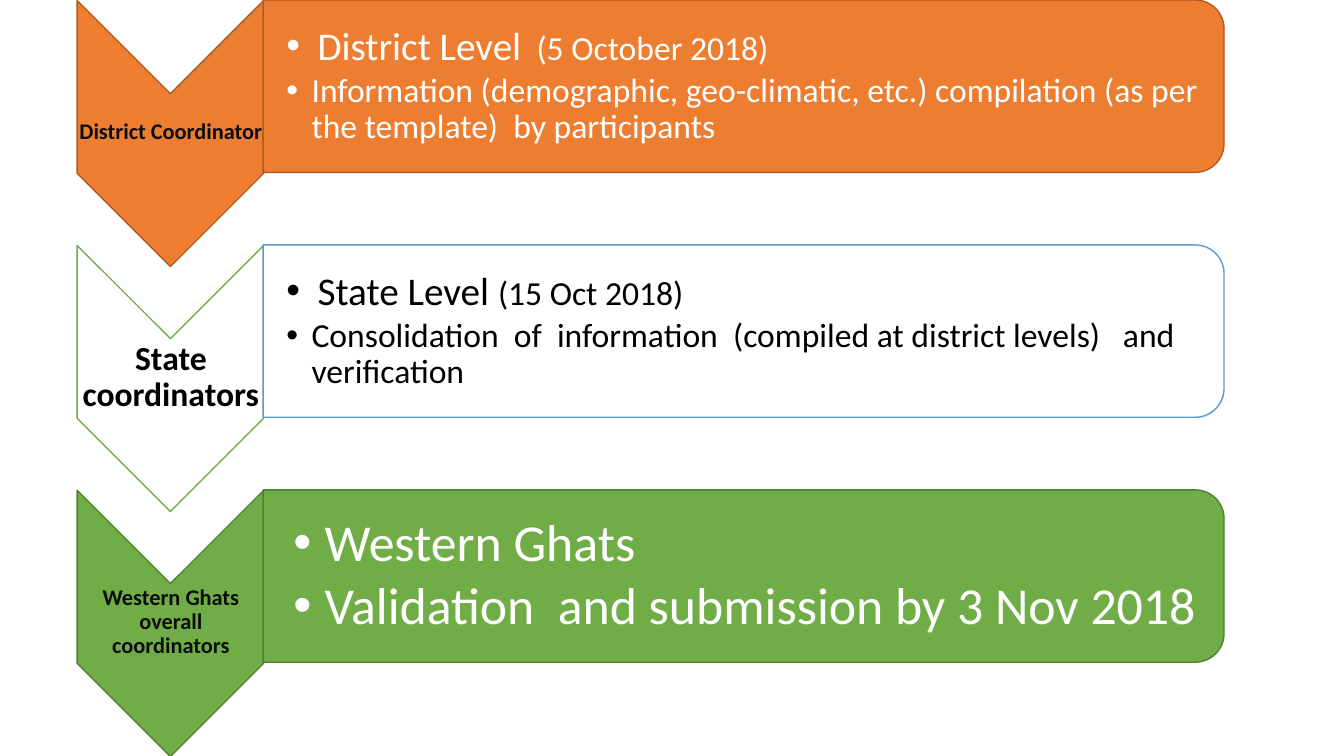
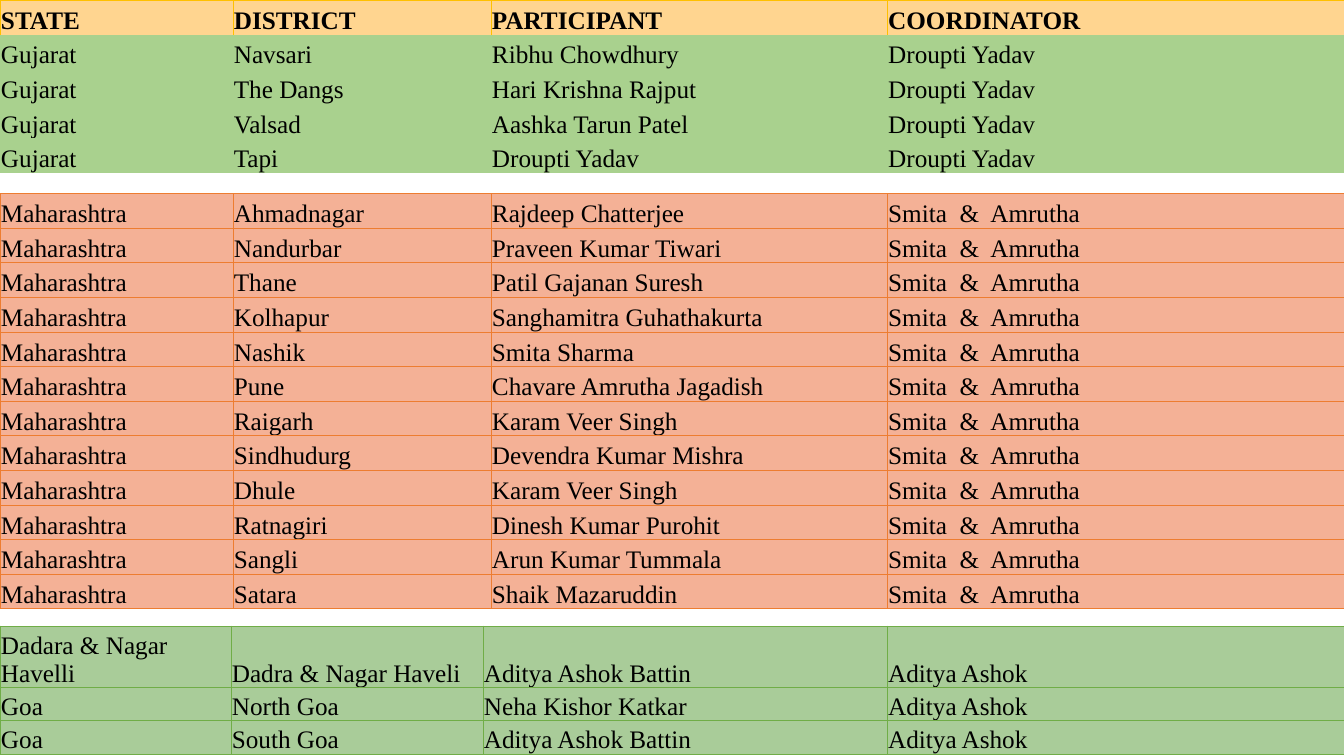
"""Build the survey coordination workflow and the participant list."""
import pptx
import pptx.dml.color
import pptx.enum.shapes
import pptx.enum.text
import pptx.oxml
import pptx.oxml.ns
import pptx.util

Inches = pptx.util.Inches
Pt = pptx.util.Pt
ANCHOR = pptx.enum.text.MSO_ANCHOR
ALIGN = pptx.enum.text.PP_ALIGN
SHAPE = pptx.enum.shapes.MSO_SHAPE

COLORS = {
    "white": "FFFFFF", "black": "000000", "ink": "0D0D0D",
    "orange": "ED7D31", "orange_edge": "AF5C24",
    "green": "70AD47", "green_edge": "538035", "blue": "5B9BD5",
    "gold": "FFC000", "header": "FFD590", "light_green": "A9D18E",
    "light_orange": "F4B196", "sage": "A9CC99",
}
BODY_FONT = "Calibri"
TABLE_FONT = "Times New Roman"
NO_STYLE = "{2D5ABB26-0587-4C30-8999-92F81FD0307C}"
STEP_PITCH = 2.43
ROW_HEIGHT = 4.12 / 12

STEPS = [
    {"role": "District Coordinator", "role_size": 16, "role_color": "ink", "role_inset": 0.01,
     "fill": "orange", "chevron_edge": "orange_edge", "card_edge": "orange_edge",
     "text_color": "white", "insets": (0.22, 0.02),
     "bullets": [
         (0.31, [("District Level", 28), ("  (5 October 2018)", 24)]),
         (0.25, [("Information (demographic, geo-climatic, etc.) compilation "
                  "(as per the template)  by participants", 24)])]},
    {"role": "State coordinators", "role_size": 24, "role_color": "black", "role_inset": 0.02,
     "fill": "white", "chevron_edge": "green", "card_edge": "blue",
     "text_color": "black", "insets": (0.22, 0.02),
     "bullets": [
         (0.31, [("State Level ", 28), ("(15 Oct 2018)", 24)]),
         (0.25, [("Consolidation  of  information  (compiled at district levels)   "
                  "and verification", 24)])]},
    {"role": "Western Ghats overall coordinators", "role_size": 16, "role_color": "ink",
     "role_inset": 0.01,
     "fill": "green", "chevron_edge": "green_edge", "card_edge": "green_edge",
     "text_color": "white", "insets": (0.29, 0.03),
     "bullets": [
         (0.31, [("Western Ghats", 37)]),
         (0.31, [("Validation  and submission by 3 Nov 2018", 37)])]},
]

GUJARAT = [
    ("Navsari", "Ribhu Chowdhury"), ("The Dangs", "Hari Krishna Rajput"),
    ("Valsad", "Aashka Tarun Patel"), ("Tapi", "Droupti Yadav"),
]
MAHARASHTRA = [
    ("Ahmadnagar", "Rajdeep Chatterjee"), ("Nandurbar", "Praveen Kumar Tiwari"),
    ("Thane", "Patil Gajanan Suresh"), ("Kolhapur", "Sanghamitra Guhathakurta"),
    ("Nashik", "Smita Sharma"), ("Pune", "Chavare Amrutha Jagadish"),
    ("Raigarh", "Karam Veer Singh"), ("Sindhudurg", "Devendra Kumar Mishra"),
    ("Dhule", "Karam Veer Singh"), ("Ratnagiri", "Dinesh Kumar Purohit"),
    ("Sangli", "Arun Kumar Tummala"), ("Satara", "Shaik Mazaruddin"),
]
OTHERS = [
    ("Dadara & Nagar Havelli", "Dadra & Nagar Haveli", "Aditya Ashok Battin"),
    ("Goa", "North Goa", "Neha Kishor Katkar"),
    ("Goa", "South Goa", "Aditya Ashok Battin"),
]


def color(name):
    """Return the named colour."""
    return pptx.dml.color.RGBColor.from_string(COLORS[name])


def apply_format(target, values):
    """Set each attribute of the target from a dict."""
    for name, value in values.items():
        setattr(target, name, value)


def add_run(paragraph, text, color_name, **font):
    """Add a run with its font values."""
    run = paragraph.add_run()
    run.text = text
    apply_format(run.font, font)
    run.font.color.rgb = color(color_name)


def add_turned_shape(slide, kind, box, fill, edge):
    """Add a shape turned a quarter clockwise."""
    shape = slide.shapes.add_shape(kind, *map(Inches, box))
    shape.rotation = 90
    shape.shadow.inherit = False
    shape.fill.solid()
    shape.fill.fore_color.rgb = color(fill)
    shape.line.color.rgb = color(edge)
    shape.line.width = Pt(1)


def add_text_frame(slide, box, left_inset, inset):
    """Add a wrapping, vertically centred text box and return its frame."""
    frame = slide.shapes.add_textbox(*map(Inches, box)).text_frame
    apply_format(frame, {
        "word_wrap": True, "vertical_anchor": ANCHOR.MIDDLE,
        "margin_left": Inches(left_inset), "margin_right": Inches(inset),
        "margin_top": Inches(inset), "margin_bottom": Inches(inset)})
    return frame


def set_bullet(paragraph, indent):
    """Give the paragraph a hanging round bullet."""
    properties = paragraph._p.get_or_add_pPr()
    properties.set("marL", str(Inches(indent)))
    properties.set("indent", str(-Inches(indent)))
    namespace = pptx.oxml.ns.nsdecls("a")
    for tag in ('buFont typeface="Arial"', 'buChar char="•"'):
        properties.append(pptx.oxml.parse_xml(f"<a:{tag} {namespace}/>"))


def add_bullets(frame, bullets, color_name):
    """Fill the frame with bulleted paragraphs."""
    for index, (indent, runs) in enumerate(bullets):
        paragraph = frame.add_paragraph() if index else frame.paragraphs[0]
        paragraph.line_spacing = 0.9
        if index:
            paragraph.space_before = Pt(0.15 * runs[0][1])
        set_bullet(paragraph, indent)
        for text, size in runs:
            add_run(paragraph, text, color_name, size=Pt(size), name=BODY_FONT)


def add_step(slide, top, step):
    """Add a chevron with its role and the card beside it."""
    add_turned_shape(slide, SHAPE.CHEVRON, (0.37, top + 0.4, 2.64, 1.85),
                     step["fill"], step["chevron_edge"])
    inset = step["role_inset"]
    frame = add_text_frame(slide, (0.77, top + 0.92, 1.85, 0.79), inset, inset)
    paragraph = frame.paragraphs[0]
    apply_format(paragraph, {"alignment": ALIGN.CENTER, "line_spacing": 0.9})
    add_run(paragraph, step["role"], step["role_color"],
            size=Pt(step["role_size"]), name=BODY_FONT, bold=True)
    add_turned_shape(slide, SHAPE.ROUND_2_SAME_RECTANGLE, (6.52, top - 3.91, 1.71, 9.53),
                     step["fill"], step["card_edge"])
    frame = add_text_frame(slide, (2.62, top + 0.08, 9.45, 1.55), *step["insets"])
    add_bullets(frame, step["bullets"], step["text_color"])


def set_borders(cell, sides, color_name):
    """Draw half-point borders on the given sides of a cell."""
    properties = cell._tc.get_or_add_tcPr()
    namespace = pptx.oxml.ns.nsdecls("a")
    for side in sides:
        properties.append(pptx.oxml.parse_xml(
            f'<a:ln{side} {namespace} w="{Pt(0.5)}"><a:solidFill>'
            f'<a:srgbClr val="{COLORS[color_name]}"/></a:solidFill></a:ln{side}>'))


def fill_cell(cell, text, fill, border, sides, bold):
    """Write and format one table cell."""
    apply_format(cell, {
        "vertical_anchor": ANCHOR.BOTTOM, "margin_left": Inches(0.01),
        "margin_right": Inches(0.01), "margin_top": Inches(0.01), "margin_bottom": 0})
    set_borders(cell, sides, border)
    cell.fill.solid()
    cell.fill.fore_color.rgb = color(fill)
    add_run(cell.text_frame.paragraphs[0], text, "black",
            size=Pt(18), name=TABLE_FONT, bold=bold)


def add_state_table(slide, top, rows, widths, fill, border, sides="LRTB",
                    has_header=False, first_height=ROW_HEIGHT, row_height=ROW_HEIGHT):
    """Add a full-width table of states and people."""
    heights = [first_height] + [row_height] * (len(rows) - 1)
    table = slide.shapes.add_table(
        len(rows), len(widths), 0, Inches(top), Inches(sum(widths)), Inches(sum(heights))).table
    apply_format(table, {"first_row": False, "horz_banding": False})
    table._tbl.tblPr.find(pptx.oxml.ns.qn("a:tableStyleId")).text = NO_STYLE
    for column, width in zip(table.columns, widths):
        column.width = Inches(width)
    for index, (row, height, texts) in enumerate(zip(table.rows, heights, rows)):
        row.height = Inches(height)
        header = has_header and index == 0
        for cell, text in zip(row.cells, texts):
            if header:
                fill_cell(cell, text, "header", "gold", "LRT", True)
            else:
                fill_cell(cell, text, fill, border, sides, False)


def add_workflow_slide(presentation):
    """Add the three-step workflow."""
    slide = presentation.slides.add_slide(presentation.slide_layouts[6])
    for index, step in enumerate(STEPS):
        add_step(slide, index * STEP_PITCH, step)


def add_participant_slide(presentation):
    """Add the three participant tables."""
    slide = presentation.slides.add_slide(presentation.slide_layouts[6])
    widths = (2.31, 2.56, 3.93, 4.53)
    header = ("STATE", "DISTRICT", "PARTICIPANT", "COORDINATOR")
    gujarat = [("Gujarat", *row, "Droupti Yadav") for row in GUJARAT]
    maharashtra = [("Maharashtra", *row, "Smita  &  Amrutha") for row in MAHARASHTRA]
    others = [(*row, "Aditya Ashok") for row in OTHERS]
    add_state_table(slide, 0, [header] + gujarat, widths, "light_green", "gold",
                    sides="", has_header=True)
    add_state_table(slide, 1.92, maharashtra, widths, "light_orange", "orange")
    add_state_table(slide, 6.21, others, (2.29, 2.5, 4.01, 4.53), "sage", "green",
                    first_height=0.57, row_height=0.33)


def main():
    """Build and save the presentation."""
    presentation = pptx.Presentation()
    apply_format(presentation, {"slide_width": Inches(13.33), "slide_height": Inches(7.5)})
    add_workflow_slide(presentation)
    add_participant_slide(presentation)
    presentation.save("out.pptx")


if __name__ == "__main__":
    main()
